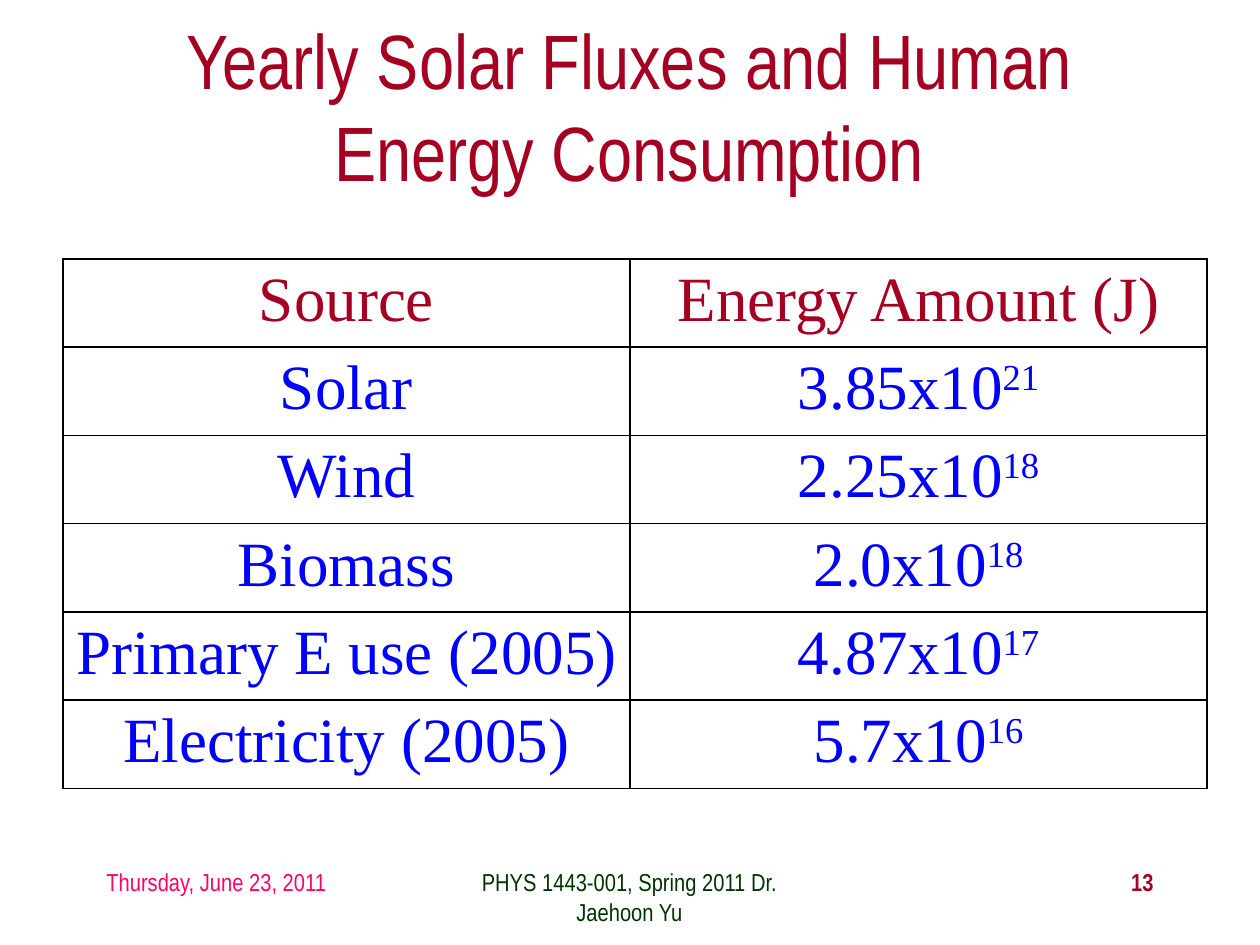
import pptx
import pptx.dml.color
import pptx.enum.text
import pptx.oxml
import pptx.oxml.ns
import pptx.util

PX = 914400 // 126
ALIGN = pptx.enum.text.PP_ALIGN
ANCHOR = pptx.enum.text.MSO_ANCHOR
RED, BLUE, PINK, GREEN = "A50021", "0000FF", "FF0066", "003300"


def add_run(para, text, size, font, color, bold=False):
    run = para.add_run()
    run.text = text
    run.font.size = pptx.util.Pt(size)
    run.font.name = font
    run.font.bold = bold
    run.font.color.rgb = pptx.dml.color.RGBColor.from_string(color)
    return run


deck = pptx.Presentation()
deck.slide_width, deck.slide_height = 1260 * PX, 945 * PX
slide = deck.slides.add_slide(deck.slide_layouts[6])

# Title and footer
title = "Yearly Solar Fluxes and Human Energy Consumption"
course = "PHYS 1443-001, Spring 2011 Dr. Jaehoon Yu"
labels = [
    (title, 94, 10, 1071, 189, 44, RED, ALIGN.CENTER, ANCHOR.MIDDLE, False),
    ("Thursday, June 23, 2011", 94, 861, 263, 63, 14, PINK, ALIGN.LEFT, ANCHOR.TOP, False),
    (course, 430, 861, 399, 63, 14, GREEN, ALIGN.CENTER, ANCHOR.TOP, False),
    ("13", 903, 861, 263, 63, 14, RED, ALIGN.RIGHT, ANCHOR.TOP, True),
]
for text, x, y, w, h, size, color, align, anchor, bold in labels:
    frame = slide.shapes.add_textbox(x * PX, y * PX, w * PX, h * PX).text_frame
    frame.word_wrap = True
    frame.vertical_anchor = anchor
    para = frame.paragraphs[0]
    para.alignment = align
    add_run(para, text, size, "Arial Narrow", color, bold)

# Energy table: source, amount, exponent
rows = [
    ("Source", "Energy Amount (J)", ""),
    ("Solar", "3.85x10", "21"),
    ("Wind", "2.25x10", "18"),
    ("Biomass", "2.0x10", "18"),
    ("Primary E use (2005)", "4.87x10", "17"),
    ("Electricity (2005)", "5.7x10", "16"),
]
high = 82
table = slide.shapes.add_table(
    len(rows), 2, 63 * PX, 259 * PX, 1144 * PX, high * len(rows) * PX).table
table.columns[0].width, table.columns[1].width = 567 * PX, 577 * PX

for i, (source, amount, power) in enumerate(rows):
    table.rows[i].height = high * PX
    color = BLUE if i else RED
    for j, text in enumerate((source, amount)):
        cell = table.cell(i, j)
        para = cell.text_frame.paragraphs[0]
        para.alignment = ALIGN.CENTER
        add_run(para, text, 36, "Times New Roman", color)
        if j and power:
            run = add_run(para, power, 36, "Times New Roman", color)
            run.font._element.set("baseline", "30000")

        # Borders go ahead of the fill
        props = cell._tc.get_or_add_tcPr()
        for side in ("lnL", "lnR", "lnT", "lnB"):
            props.append(pptx.oxml.parse_xml(
                f'<a:{side} {pptx.oxml.ns.nsdecls("a")} w="12700"><a:solidFill>'
                f'<a:srgbClr val="000000"/></a:solidFill></a:{side}>'))
        cell.fill.background()

deck.save("out.pptx")
